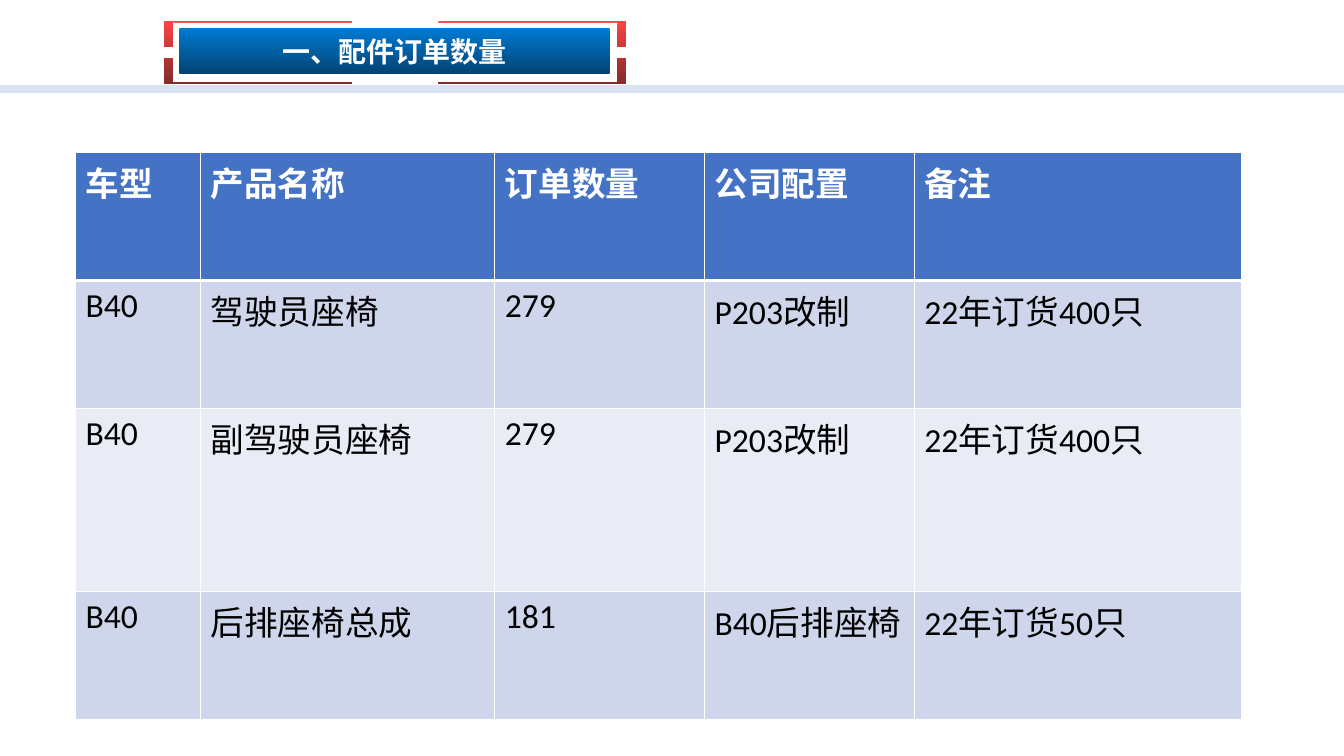
from lxml.etree import SubElement
from pptx import Presentation
from pptx.dml.color import RGBColor
from pptx.enum.shapes import MSO_CONNECTOR, MSO_SHAPE
from pptx.enum.text import MSO_ANCHOR, PP_ALIGN
from pptx.oxml.ns import qn
from pptx.util import Pt

COLORS = {
    "white": "FFFFFF", "black": "000000", "rule": "DAE3F3",
    "blue": "007BD3", "navy": "034373", "red": "FE4444", "maroon": "832B2B",
    "head": "4472C4", "odd": "CFD5EA", "even": "E9EBF5",
}
CJK = "Noto Sans CJK SC"
WIDE, HIGH = 960, 540
COLS = (89.3, 210.2, 149.8, 149.8, 234)
ROWS = (91.4, 91.4, 131, 91.4)
ORDERS = (
    ("车型", "产品名称", "订单数量", "公司配置", "备注"),
    ("B40", "驾驶员座椅", "279", "P203改制", "22年订货400只"),
    ("B40", "副驾驶员座椅", "279", "P203改制", "22年订货400只"),
    ("B40", "后排座椅总成", "181", "B40后排座椅", "22年订货50只"),
)


def color(name):
    return RGBColor.from_string(COLORS[name])


def write(frame, text, tint, **form):
    """Put one run in the frame and give its font the format values."""
    run = frame.paragraphs[0].add_run()
    run.text = text
    for key, value in form.items():
        setattr(run.font, key, value)
    run.font.color.rgb = color(tint)
    SubElement(run.font._element, qn("a:ea"), typeface=CJK)


def blend(shape, *tints):
    """Fill the shape from top to bottom, with no line or shadow."""
    shape.shadow.inherit = False
    shape.line.fill.background()
    shape.fill.gradient()
    shape.fill.gradient_angle = 270
    for stop, tint, place in zip(shape.fill.gradient_stops, tints, (0, 1)):
        stop.color.rgb = color(tint)
        stop.position = place


def add_rule(slide, y):
    line = slide.shapes.add_connector(
        MSO_CONNECTOR.STRAIGHT, 0, Pt(y), Pt(WIDE), Pt(y))
    line.line.color.rgb = color("rule")
    line.line.width = Pt(6)
    SubElement(line._element.spPr, qn("a:effectLst"))


def add_frame(shapes, x, y, w, h):
    """Draw four mirrored corner brackets as one outline."""
    arm, leg, bar, thin = 134, 18, 6, 1
    bracket = ((0, 0), (arm, 0), (arm, thin), (bar, thin), (bar, leg), (0, leg))
    pen = None
    for right in (False, True):
        for low in (False, True):
            dots = [(Pt(x + (w - dx if right else dx)),
                     Pt(y + (h - dy if low else dy))) for dx, dy in bracket]
            if pen is None:
                pen = shapes.build_freeform(*dots[0])
            else:
                pen.move_to(*dots[0])
            pen.add_line_segments(dots[1:], close=True)
    blend(pen.convert_to_shape(), "red", "maroon")


def add_title(slide, text, x, y, w, h):
    shapes = slide.shapes.add_group_shape().shapes
    plate = shapes.add_shape(
        MSO_SHAPE.RECTANGLE, Pt(x + 10.8), Pt(y + 5), Pt(w - 22.4), Pt(32.4))
    blend(plate, "blue", "navy")
    frame = plate.text_frame
    frame.vertical_anchor = MSO_ANCHOR.MIDDLE
    write(frame, text, "white", name=CJK, size=Pt(20), bold=True)
    frame.paragraphs[0].alignment = PP_ALIGN.CENTER
    add_frame(shapes, x, y, w, h)


def edge(cell, **sides):
    """Draw white cell borders of the given widths, ahead of the fill."""
    props = cell._tc.get_or_add_tcPr()
    for spot, (side, width) in enumerate(sides.items()):
        line = SubElement(props, qn(f"a:ln{side}"), w=str(Pt(width)))
        fill = SubElement(line, qn("a:solidFill"))
        SubElement(fill, qn("a:srgbClr"), val=COLORS["white"])
        props.insert(spot, line)


def add_orders(slide, x, y):
    table = slide.shapes.add_table(
        len(ROWS), len(COLS), Pt(x), Pt(y), Pt(sum(COLS)), Pt(sum(ROWS))).table
    for col, width in zip(table.columns, COLS):
        col.width = Pt(width)
    for r, (row, height) in enumerate(zip(table.rows, ROWS)):
        row.height = Pt(height)
        head = r == 0
        shade = "head" if head else "odd" if r % 2 else "even"
        for cell, text in zip(row.cells, ORDERS[r]):
            cell.fill.solid()
            cell.fill.fore_color.rgb = color(shade)
            edge(cell, L=1, R=1, T=3 if r == 1 else 1, B=3 if head else 1)
            write(cell.text_frame, text, "white" if head else "black",
                  name="Calibri", size=Pt(24), bold=head)


def main():
    deck = Presentation()
    deck.slide_width, deck.slide_height = Pt(WIDE), Pt(HIGH)
    slide = deck.slides.add_slide(deck.slide_layouts[6])
    add_rule(slide, 63.4)
    add_title(slide, "一、配件订单数量", 117.3, 15.1, 329.8, 44.6)
    add_orders(slide, 54, 109)
    deck.save("out.pptx")


if __name__ == "__main__":
    main()
